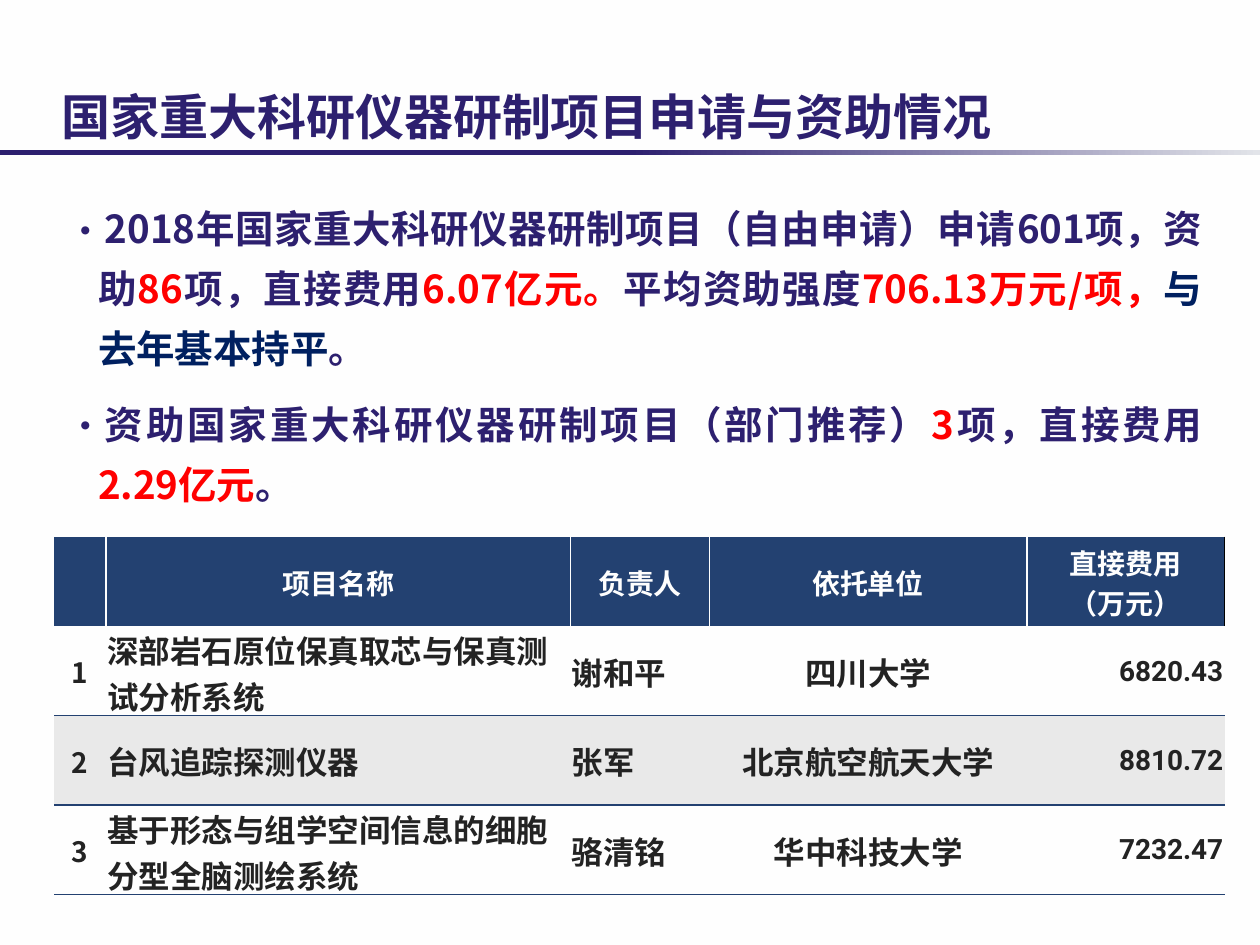
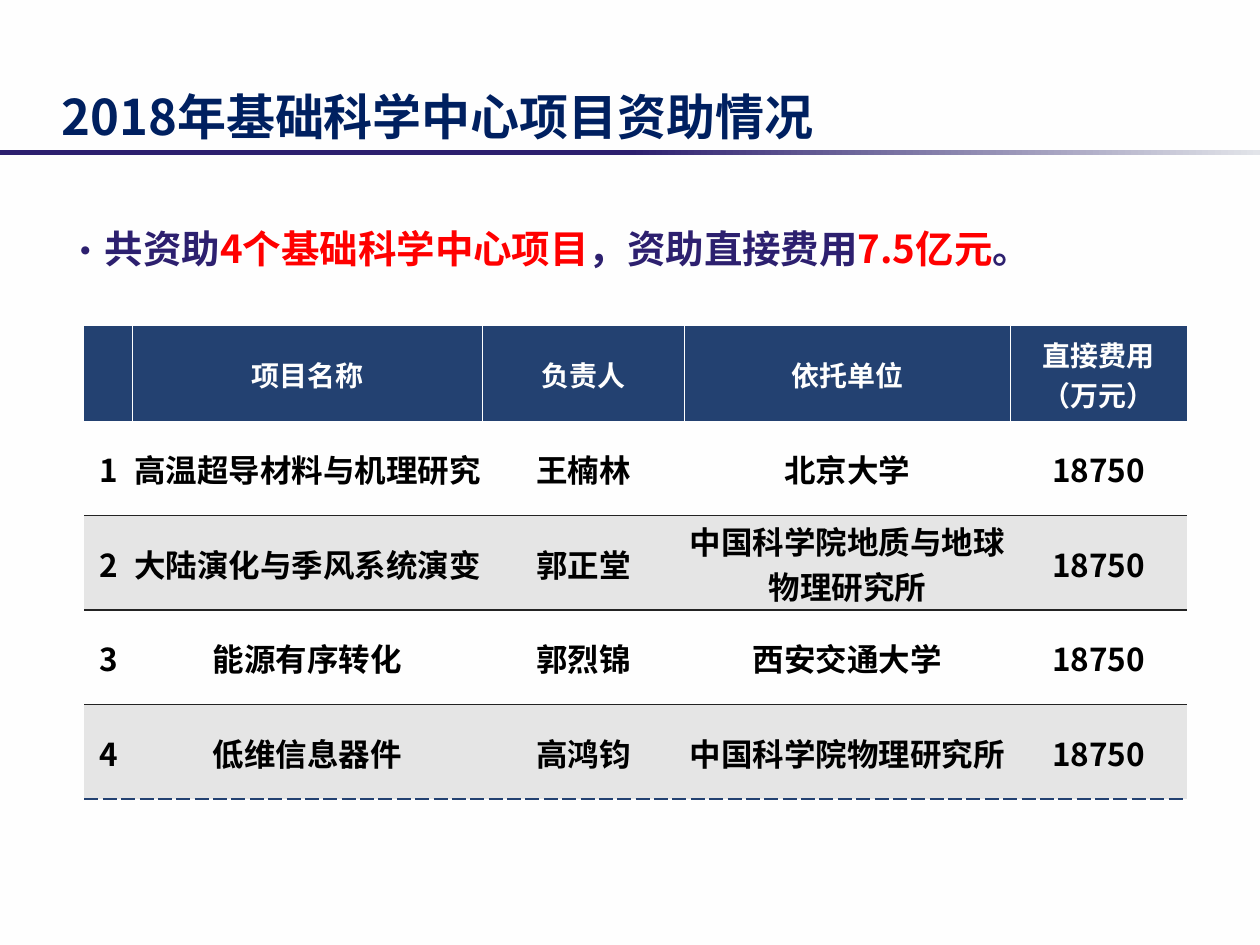
"""Build two slides on the funding of research instruments and science centres."""
from dataclasses import dataclass

from lxml import etree
from pptx import Presentation
from pptx.dml.color import RGBColor
from pptx.enum.shapes import MSO_SHAPE
from pptx.enum.text import MSO_ANCHOR, PP_ALIGN
from pptx.oxml.ns import qn
from pptx.util import Inches, Pt

LEFT, CENTER, RIGHT = PP_ALIGN.LEFT, PP_ALIGN.CENTER, PP_ALIGN.RIGHT
JUSTIFY = PP_ALIGN.JUSTIFY
MIDDLE, BOTTOM = MSO_ANCHOR.MIDDLE, MSO_ANCHOR.BOTTOM
RECTANGLE = MSO_SHAPE.RECTANGLE
NO_GRID_STYLE = "{2D5ABB26-0587-4C30-8999-92F81FD0307C}"


@dataclass(frozen=True)
class Theme:
    paper: str = "FEFEFE"
    violet: str = "2D206F"
    mist: str = "E2E4E9"
    navy: str = "002060"
    red: str = "FF0000"
    header: str = "234171"
    ink: str = "232323"
    black: str = "000000"
    cjk: str = "Noto Sans CJK SC"
    latin: str = "Roboto"
    title_size: int = 28
    body_size: int = 22
    cell_size: int = 18
    small_size: int = 16


T = Theme()

HEADINGS = ["", "项目名称", "负责人", "依托单位", "直接费用\n（万元）"]

INSTRUMENTS = {
    "title": "国家重大科研仪器研制项目申请与资助情况",
    "title_color": T.violet,
    "points_top": 1.47,
    "points_height": 2.2,
    "points_after": 3,
    "points": [
        [("2018年国家重大科研仪器研制项目（自由申请）申请601项，资助", T.violet),
         ("86", T.red), ("项，直接费用", T.violet), ("6.07亿元。", T.red),
         ("平均资助强度", T.violet), ("706.13万元/项，", T.red),
         ("与去年基本持平", T.navy), ("。", T.violet)],
        [("资助国家重大科研仪器研制项目（部门推荐）", T.violet), ("3", T.red),
         ("项，直接费用", T.violet), ("2.29亿元", T.red), ("。", T.violet)],
    ],
    "projects": [
        ("深部岩石原位保真取芯与保真测试分析系统", "谢和平", "四川大学", "6820.43"),
        ("台风追踪探测仪器", "张军", "北京航空航天大学", "8810.72"),
        ("基于形态与组学空间信息的细胞分型全脑测绘系统", "骆清铭", "华中科技大学", "7232.47"),
    ],
    "table_at": (0.43, 4.26),
    "columns": [0.41, 3.69, 1.1, 2.52, 1.57],
    "row_height": 0.71,
    "aligns": [CENTER, LEFT, LEFT, CENTER, RIGHT],
    "sizes": [T.small_size, T.cell_size, T.cell_size, T.cell_size, T.small_size],
    "fonts": [T.cjk] + [T.latin] * 4,
    "text_color": T.ink,
    "stripe": "E9E9E9",
    "divider": (T.paper, 1),
    "header_edge": (T.black, 1),
    "rule": (T.header, 0.75),
    "last_rule": (T.header, 0.75),
}

CENTRES = {
    "title": "2018年基础科学中心项目资助情况",
    "title_color": T.navy,
    "points_top": 1.63,
    "points_height": 0.8,
    "points_after": 6,
    "points": [
        [("共资助", T.violet), ("4个基础科学中心项目", T.red),
         ("，资助直接费用", T.violet), ("7.5亿元", T.red), ("。", T.violet)],
    ],
    "projects": [
        ("高温超导材料与机理研究", "王楠林", "北京大学", "18750"),
        ("大陆演化与季风系统演变", "郭正堂", "中国科学院地质与地球物理研究所", "18750"),
        ("能源有序转化", "郭烈锦", "西安交通大学", "18750"),
        ("低维信息器件", "高鸿钧", "中国科学院物理研究所", "18750"),
    ],
    "table_at": (0.67, 2.59),
    "columns": [0.38, 2.78, 1.6, 2.59, 1.4],
    "row_height": 0.75,
    "aligns": [CENTER] * 5,
    "sizes": [T.cell_size] * 5,
    "fonts": [T.cjk] * 5,
    "text_color": T.black,
    "stripe": "E5E5E5",
    "divider": (T.paper, 0.75),
    "header_edge": None,
    "rule": (T.ink, 1),
    "last_rule": (T.header, 1, "sysDash"),
}


def rgb(value):
    return RGBColor.from_string(value)


def style_run(run, size, color, font=T.cjk):
    run.font.size = Pt(size)
    run.font.bold = True
    run.font.name = font
    run.font.color.rgb = rgb(color)
    etree.SubElement(run._r.get_or_add_rPr(), qn("a:ea"), typeface=T.cjk)


def add_text_frame(slide, left, top, width, height):
    frame = slide.shapes.add_textbox(*map(Inches, (left, top, width, height))).text_frame
    frame.word_wrap = True
    return frame


def add_band(slide):
    band = slide.shapes.add_shape(RECTANGLE, 0, Inches(1.19), Inches(10), Inches(0.04))
    band.shadow.inherit = False
    band.line.fill.background()
    band.fill.gradient()
    band.fill.gradient_angle = 0
    for stop, position, color in zip(band.fill.gradient_stops, (0.5, 1), (T.violet, T.mist)):
        stop.position = position
        stop.color.rgb = rgb(color)


def add_title(slide, content):
    frame = add_text_frame(slide, 0.43, 0.13, 9.21, 1.02)
    frame.vertical_anchor = BOTTOM
    frame.margin_left = frame.margin_right = Inches(0.06)
    frame.margin_top = frame.margin_bottom = 0
    frame.text = content["title"]
    title = frame.paragraphs[0]
    title.line_spacing = 1.1
    title.space_after = Pt(1)
    style_run(title.runs[0], T.title_size, content["title_color"])


def add_bullet(paragraph):
    properties = paragraph._p.get_or_add_pPr()
    properties.set("marL", str(Inches(0.25)))
    properties.set("indent", str(-Inches(0.25)))
    color = etree.SubElement(properties, qn("a:buClr"))
    etree.SubElement(color, qn("a:srgbClr"), val=T.violet)
    etree.SubElement(properties, qn("a:buFont"), typeface=T.cjk)
    etree.SubElement(properties, qn("a:buChar"), char="•")


def add_points(slide, content):
    frame = add_text_frame(slide, 0.43, content["points_top"], 9.21, content["points_height"])
    for index, spans in enumerate(content["points"]):
        point = frame.add_paragraph() if index else frame.paragraphs[0]
        add_bullet(point)
        point.alignment = JUSTIFY
        point.line_spacing = 1.3
        point.space_before = Pt(6 if index else 0)
        point.space_after = Pt(content["points_after"])
        for text, color in spans:
            run = point.add_run()
            run.text = text
            style_run(run, T.body_size, color)


def set_borders(cell, borders):
    properties = cell._tc.get_or_add_tcPr()
    for index, (side, border) in enumerate(borders):
        color, width, *dash = border
        line = etree.Element(qn(f"a:ln{side}"), w=str(Pt(width)))
        fill = etree.SubElement(line, qn("a:solidFill"))
        etree.SubElement(fill, qn("a:srgbClr"), val=color)
        if dash:
            etree.SubElement(line, qn("a:prstDash"), val=dash[0])
        properties.insert(index, line)


def fill_cell(cell, text, align, size, color, font, background):
    cell.vertical_anchor = MIDDLE
    cell.margin_left = cell.margin_right = cell.margin_top = Inches(0.01)
    cell.margin_bottom = 0
    cell.text_frame.text = text
    for paragraph in cell.text_frame.paragraphs:
        paragraph.alignment = align
        for run in paragraph.runs:
            style_run(run, size, color, font)
    if background:
        cell.fill.solid()
        cell.fill.fore_color.rgb = rgb(background)
    else:
        cell.fill.background()


def add_projects(slide, content):
    projects = [(str(number), *project)
                for number, project in enumerate(content["projects"], 1)]
    columns, row_count = content["columns"], len(projects) + 1
    size = sum(columns), content["row_height"] * row_count
    table = slide.shapes.add_table(
        row_count, len(columns), *map(Inches, (*content["table_at"], *size))).table
    table._tbl.tblPr[0].text = NO_GRID_STYLE
    for column, width in zip(table.columns, columns):
        column.width = Inches(width)
    for row in table.rows:
        row.height = Inches(content["row_height"])

    last = len(columns) - 1
    for index, heading in enumerate(HEADINGS):
        cell = table.cell(0, index)
        fill_cell(cell, heading, CENTER, T.small_size, T.paper, T.cjk, T.header)
        edge = content["header_edge"] if index == last else content["divider"]
        if edge:
            set_borders(cell, [("R", edge)])

    for row, project in enumerate(projects, 1):
        rule = content["last_rule"] if row == len(projects) else content["rule"]
        background = content["stripe"] if row % 2 == 0 else None
        looks = zip(project, content["aligns"], content["sizes"], content["fonts"])
        for index, (text, align, text_size, font) in enumerate(looks):
            cell = table.cell(row, index)
            fill_cell(cell, text, align, text_size, content["text_color"], font, background)
            set_borders(cell, [("B", rule)])


def main():
    deck = Presentation()
    deck.slide_width, deck.slide_height = Inches(10), Inches(7.5)
    for content in (INSTRUMENTS, CENTRES):
        slide = deck.slides.add_slide(deck.slide_layouts[6])
        slide.background.fill.solid()
        slide.background.fill.fore_color.rgb = rgb(T.paper)
        add_band(slide)
        add_title(slide, content)
        add_points(slide, content)
        add_projects(slide, content)
    deck.save("out.pptx")


if __name__ == "__main__":
    main()
